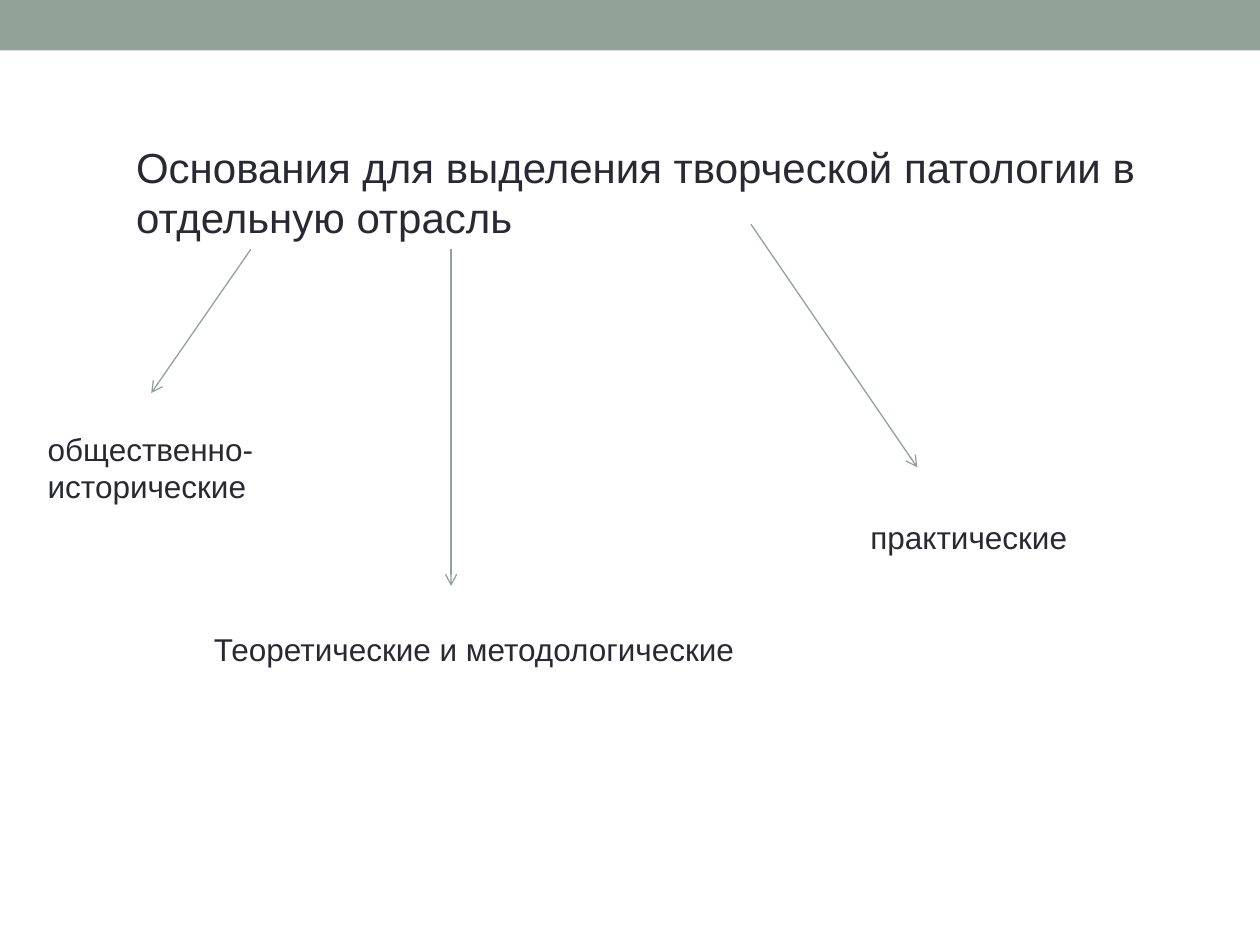
from pptx import Presentation
from pptx.dml.color import RGBColor
from pptx.enum.shapes import MSO_CONNECTOR, MSO_SHAPE
from pptx.enum.text import MSO_ANCHOR, MSO_AUTO_SIZE, PP_ALIGN
from pptx.oxml.ns import qn
from pptx.util import Pt
from lxml.etree import SubElement

PX = 9144  # 100 px to the inch
WIDTH, HEIGHT = 1000, 750
FONT = "Arial"
COLORS = {"accent": "93A299", "text": "292934"}

# label lines, label box, arrow start, arrow end
BRANCHES = [
    (["общественно-", "исторические"], (28, 336, 185, 71), (199, 198), (120, 312)),
    (["Теоретические и методологические"], (160, 495, 437, 40), (358, 198), (358, 465)),
    (["практические"], (681, 406, 178, 40), (596, 178), (728, 371)),
]


def emu(*lengths):
    return [n * PX for n in lengths]


def color(name):
    return RGBColor.from_string(COLORS[name])


def write(sp, lines, size, wrap):
    tf = sp.text_frame
    tf.word_wrap = wrap
    tf.auto_size = MSO_AUTO_SIZE.NONE
    tf.vertical_anchor = MSO_ANCHOR.TOP
    tf.text = "\n".join(lines)
    for p in tf.paragraphs:
        p.alignment = PP_ALIGN.LEFT
        p.font.name = FONT
        p.font.size = Pt(size)
        p.font.color.rgb = color("text")


def add_band(s, box):
    sp = s.shapes.add_shape(MSO_SHAPE.RECTANGLE, *emu(*box))
    sp.shadow.inherit = False
    sp.fill.solid()
    sp.fill.fore_color.rgb = color("accent")
    sp.line.fill.background()


def add_title(s, text, box):
    sp = s.shapes.title
    sp.left, sp.top, sp.width, sp.height = emu(*box)
    write(sp, [text], 24, True)


def add_arrow(s, start, end):
    line = s.shapes.add_connector(MSO_CONNECTOR.STRAIGHT, *emu(*start, *end))
    line.line.color.rgb = color("accent")
    line.line.width = Pt(0.75)
    SubElement(line.line._get_or_add_ln(), qn("a:tailEnd"), type="arrow")
    SubElement(line._element.spPr, qn("a:effectLst"))


def add_branch(s, lines, box, start, end):
    add_arrow(s, start, end)
    write(s.shapes.add_textbox(*emu(*box)), lines, 18, False)


def main():
    prs = Presentation()
    prs.slide_width, prs.slide_height = emu(WIDTH, HEIGHT)
    s = prs.slides.add_slide(prs.slide_layouts.get_by_name("Title Only"))
    add_band(s, (0, 0, WIDTH, 40))
    add_title(s, "Основания для выделения творческой патологии в отдельную отрасль",
              (98, 107, 827, 91))
    for branch in BRANCHES:
        add_branch(s, *branch)
    prs.save("out.pptx")


if __name__ == "__main__":
    main()
